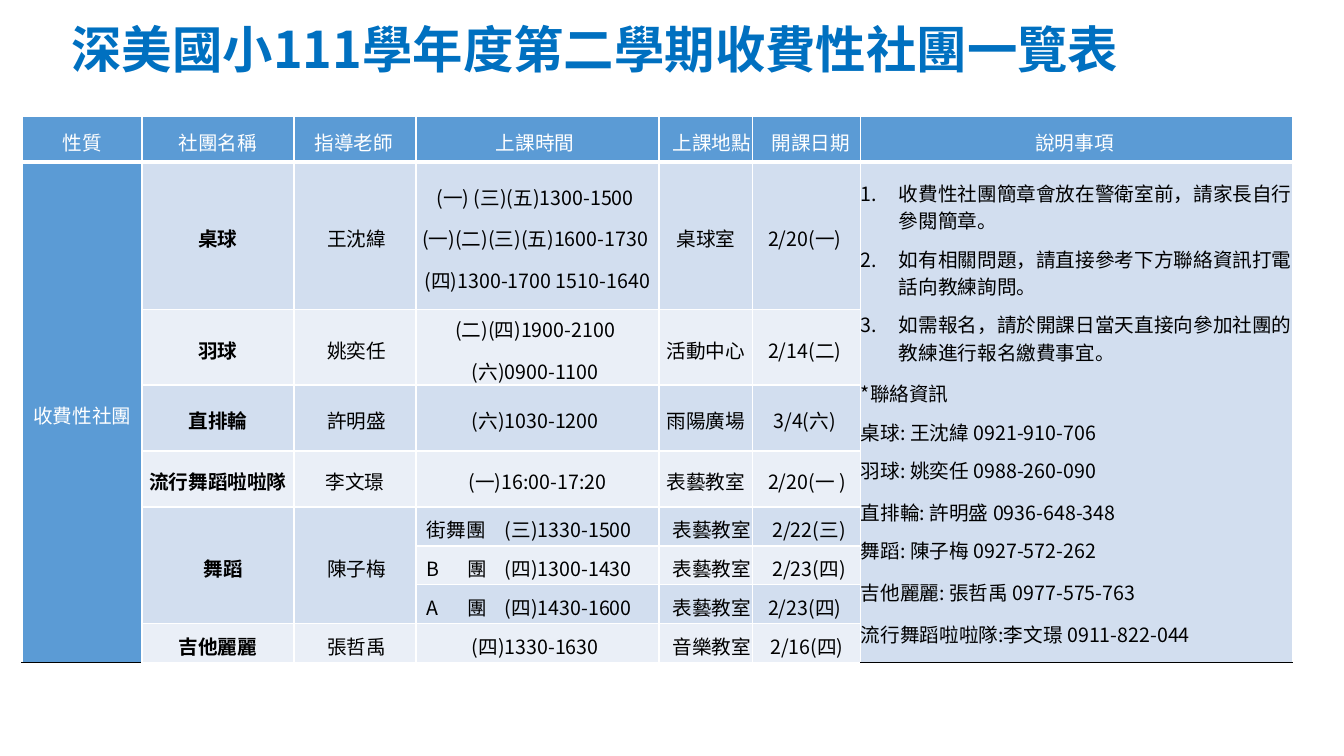
from lxml import etree
from pptx import Presentation
from pptx import util as u
from pptx.dml.color import RGBColor
from pptx.enum import text
from pptx.oxml.ns import qn

EMU_PER_PX = 914400 / 100.8
CJK_FONT = "Noto Sans CJK SC"

TITLE_BLUE = RGBColor(0x00, 0x70, 0xC0)
HEADER_BLUE = RGBColor(0x5B, 0x9B, 0xD5)
BAND_DARK = RGBColor(0xD2, 0xDE, 0xEF)
BAND_LIGHT = RGBColor(0xEA, 0xEF, 0xF7)
WHITE = RGBColor(0xFF, 0xFF, 0xFF)
BLACK = RGBColor(0x00, 0x00, 0x00)

CENTER, LEFT = text.PP_ALIGN.CENTER, text.PP_ALIGN.LEFT
TITLE_FONT = {"name": CJK_FONT, "size": u.Pt(36), "bold": True}
HEADER_FONT = {"name": "Arial", "size": u.Pt(14), "bold": False}
BODY_FONT = {"name": CJK_FONT, "size": u.Pt(14), "bold": False}
CLUB_FONT = {"name": CJK_FONT, "size": u.Pt(14), "bold": True}
CENTERED = {"alignment": CENTER, "line_spacing": 1.07, "space_after": u.Pt(8)}

COLUMN_WIDTHS = [120, 152, 122, 243, 94, 108, 432]
ROW_HEIGHTS = [46, 143, 75, 66, 56, 39, 39, 39, 39]
HEADERS = ["性質 ", "社團名稱 ", "指導老師 ", "上課時間 ", "上課地點 ", "開課日期 ", "說明事項 "]
HEADER_INDENTS = [5, 4, 2, 0, 12, 12, 0]
# Left indent of a column's cells whose text ends with a space
BODY_INDENTS = [5, 15, 8, 0, 12, 0]
CATEGORY = "收費性社團 "
# Club, teacher, time, place, first day; None continues the cell above
CLUBS = [
    ["桌球", "王沈緯 ",
     "(一) (三)(五)1300-1500 \n(一)(二)(三)(五)1600-1730 \n(四)1300-1700 1510-1640",
     "桌球室", "2/20(一) "],
    ["羽球", "姚奕任 ", "(二)(四)1900-2100 \n(六)0900-1100 ", "活動中心", "2/14(二) "],
    ["直排輪", "許明盛 ", "(六)1030-1200 ", "雨陽廣場", "3/4(六) "],
    ["流行舞蹈啦啦隊", "李文璟", "(一)16:00-17:20", "表藝教室", "2/20(一 )"],
    ["舞蹈 ", "陳子梅 ", "街舞團\t(三)1330-1500", "表藝教室 ", " 2/22(三)"],
    [None, None, "B\t團\t(四)1300-1430", "表藝教室 ", " 2/23(四)"],
    [None, None, "A\t團\t(四)1430-1600", "表藝教室 ", "2/23(四) "],
    ["吉他麗麗", "張哲禹 ", "(四)1330-1630 ", "音樂教室 ", "2/16(四)"],
]
RULES = [
    ("收費性社團簡章會放在警衛室前，請家長自行參閱簡章。", 0.95),
    ("如有相關問題，請直接參考下方聯絡資訊打電話向教練詢問。", 0.95),
    ("如需報名，請於開課日當天直接向參加社團的教練進行報名繳費事宜。", 0.96),
]
CONTACTS = [
    ("*聯絡資訊", 1.07),
    ("桌球: 王沈緯 0921-910-706", 0.95),
    ("羽球: 姚奕任 0988-260-090", 0.95),
    ("直排輪: 許明盛 0936-648-348", 1.07),
    ("舞蹈: 陳子梅 0927-572-262", 0.95),
    ("吉他麗麗: 張哲禹 0977-575-763", 1.07),
    ("流行舞蹈啦啦隊:李文璟 0911-822-044", 1.07),
]


def px(length):
    return u.Emu(round(length * EMU_PER_PX))


def apply(target, values):
    for name, value in values.items():
        setattr(target, name, value)


def write(paragraph, words, font, color, layout):
    run = paragraph.add_run()
    run.text = words
    apply(run.font, font)
    run.font.color.rgb = color
    etree.SubElement(run._r.get_or_add_rPr(), qn("a:ea"), typeface=CJK_FONT)
    apply(paragraph, layout)


def next_paragraph(frame):
    first = frame.paragraphs[0]
    return frame.add_paragraph() if first.runs else first


def indent(paragraph, left, hanging=0):
    properties = paragraph._p.get_or_add_pPr()
    properties.set("marL", str(px(left)))
    properties.set("indent", str(px(-hanging)))
    return properties


def number(paragraph):
    properties = indent(paragraph, 38, 38)
    bullet_color = etree.SubElement(properties, qn("a:buClr"))
    etree.SubElement(bullet_color, qn("a:srgbClr"), val=str(BLACK))
    etree.SubElement(properties, qn("a:buFont"), typeface="+mj-lt")
    etree.SubElement(properties, qn("a:buAutoNum"), type="arabicPeriod")


def add_tabs(paragraph, stops):
    tabs = etree.SubElement(paragraph._p.get_or_add_pPr(), qn("a:tabLst"))
    for stop in stops:
        etree.SubElement(tabs, qn("a:tab"), pos=str(px(stop)), algn="l")


def style_cell(cell, fill, bottom=(WHITE, 1)):
    apply(cell, {"margin_left": 0, "margin_top": px(3), "margin_right": 0,
                 "margin_bottom": 0, "vertical_anchor": text.MSO_ANCHOR.MIDDLE})
    edges = {"lnL": (WHITE, 1), "lnR": (WHITE, 1), "lnT": (WHITE, 1), "lnB": bottom}
    for edge, (color, points) in edges.items():
        line = etree.SubElement(cell._tc.get_or_add_tcPr(), qn("a:" + edge),
                                w=str(u.Pt(points)))
        paint = etree.SubElement(line, qn("a:solidFill"))
        etree.SubElement(paint, qn("a:srgbClr"), val=str(color))
    cell.fill.solid()
    cell.fill.fore_color.rgb = fill


def fill_cell(cell, words, font, color, left=0):
    for line in words.split("\n"):
        paragraph = next_paragraph(cell.text_frame)
        indent(paragraph, left)
        write(paragraph, line, font, color, CENTERED)


def fill_team_time(cell, words):
    """A dance team and its time, lined up on tab stops."""
    cell.margin_left = px(11)
    paragraph = cell.text_frame.paragraphs[0]
    add_tabs(paragraph, [41, 78] if words.count("\t") == 2 else [78])
    write(paragraph, words, BODY_FONT, BLACK, {**CENTERED, "alignment": LEFT})


def fill_notes(cell):
    for words, spacing in RULES + CONTACTS:
        paragraph = next_paragraph(cell.text_frame)
        if (words, spacing) in RULES:
            number(paragraph)
        write(paragraph, words, BODY_FONT, BLACK,
              {**CENTERED, "alignment": LEFT, "line_spacing": spacing})


def add_title(slide):
    title = slide.shapes.title
    apply(title, {"left": px(22), "top": px(-11), "width": px(1146), "height": px(127)})
    apply(title.text_frame, {"word_wrap": True, "auto_size": text.MSO_AUTO_SIZE.NONE,
                             "vertical_anchor": text.MSO_ANCHOR.MIDDLE})
    write(title.text_frame.paragraphs[0], "深美國小111學年度第二學期收費性社團一覽表",
          TITLE_FONT, TITLE_BLUE, {"alignment": CENTER, "line_spacing": 0.9})


def add_club_table(slide):
    clubs = slide.shapes.add_table(
        len(ROW_HEIGHTS), len(COLUMN_WIDTHS), px(22), px(116),
        px(sum(COLUMN_WIDTHS)), px(sum(ROW_HEIGHTS))).table
    for column, width in zip(clubs.columns, COLUMN_WIDTHS):
        column.width = px(width)
    for row, height in zip(clubs.rows, ROW_HEIGHTS):
        row.height = px(height)

    # Header row
    for col, (words, left) in enumerate(zip(HEADERS, HEADER_INDENTS)):
        style_cell(clubs.cell(0, col), HEADER_BLUE, (WHITE, 3))
        fill_cell(clubs.cell(0, col), words, HEADER_FONT, WHITE, left)

    # Club rows, banded
    for row, club in enumerate(CLUBS, 1):
        band = BAND_DARK if row % 2 else BAND_LIGHT
        style_cell(clubs.cell(row, 0), HEADER_BLUE, (BLACK, 1))
        style_cell(clubs.cell(row, 6), BAND_DARK, (BLACK, 1))
        for col, words in enumerate(club, 1):
            cell = clubs.cell(row, col)
            style_cell(cell, band)
            if words and "\t" in words:
                fill_team_time(cell, words)
            elif words:
                left = BODY_INDENTS[col] if words.endswith(" ") else 0
                fill_cell(cell, words, CLUB_FONT if col == 1 else BODY_FONT, BLACK, left)

    # Cells that span rows
    fill_cell(clubs.cell(1, 0), CATEGORY, HEADER_FONT, WHITE, BODY_INDENTS[0])
    fill_notes(clubs.cell(1, 6))
    for col, first, last in [(0, 1, 8), (6, 1, 8), (1, 5, 7), (2, 5, 7)]:
        clubs.cell(first, col).merge(clubs.cell(last, col))


def main():
    deck = Presentation()
    apply(deck, {"slide_width": px(1344), "slide_height": px(756)})
    slide = deck.slides.add_slide(deck.slide_layouts[5])
    add_title(slide)
    add_club_table(slide)
    deck.save("out.pptx")


if __name__ == "__main__":
    main()
